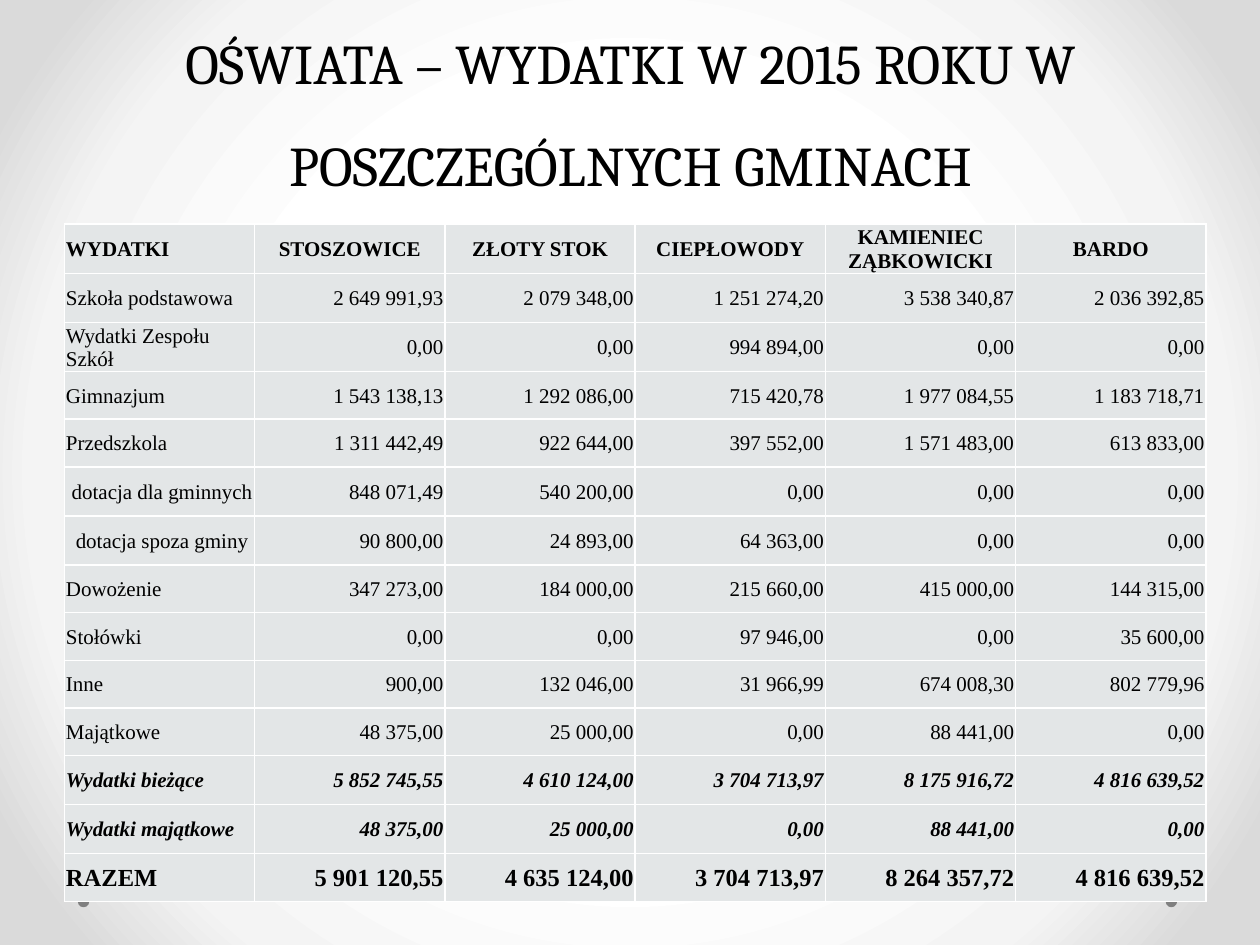
from pptx import Presentation
from pptx import util as u
from pptx.dml.color import RGBColor
from pptx.enum import shapes, text
from pptx.oxml import parse_xml
from pptx.oxml.ns import nsdecls, qn

COLORS = {"text": "000000", "cell": "E3E6E7", "border": "FFFFFF", "dot": "808080"}
BACKGROUND_STOPS = [(50, "FFFFFF"), (76, "F4F4F4"), (92, "DADADA")]
TITLE = "OŚWIATA – WYDATKI W 2015 ROKU W POSZCZEGÓLNYCH GMINACH"

# Row style, then the label and one amount per municipality
ROWS = [
    ("header", "WYDATKI", "STOSZOWICE", "ZŁOTY STOK", "CIEPŁOWODY", "KAMIENIEC ZĄBKOWICKI", "BARDO"),
    ("tall", "Szkoła podstawowa", "2 649 991,93", "2 079 348,00", "1 251 274,20", "3 538 340,87", "2 036 392,85"),
    ("tall", "Wydatki Zespołu Szkół", "0,00", "0,00", "994 894,00", "0,00", "0,00"),
    ("plain", "Gimnazjum", "1 543 138,13", "1 292 086,00", "715 420,78", "1 977 084,55", "1 183 718,71"),
    ("plain", "Przedszkola", "1 311 442,49", "922 644,00", "397 552,00", "1 571 483,00", "613 833,00"),
    ("grant", "dotacja dla gminnych", "848 071,49", "540 200,00", "0,00", "0,00", "0,00"),
    ("grant", "dotacja spoza gminy", "90 800,00", "24 893,00", "64 363,00", "0,00", "0,00"),
    ("plain", "Dowożenie", "347 273,00", "184 000,00", "215 660,00", "415 000,00", "144 315,00"),
    ("plain", "Stołówki", "0,00", "0,00", "97 946,00", "0,00", "35 600,00"),
    ("plain", "Inne", "900,00", "132 046,00", "31 966,99", "674 008,30", "802 779,96"),
    ("plain", "Majątkowe", "48 375,00", "25 000,00", "0,00", "88 441,00", "0,00"),
    ("subtotal", "Wydatki bieżące", "5 852 745,55", "4 610 124,00", "3 704 713,97", "8 175 916,72", "4 816 639,52"),
    ("subtotal", "Wydatki majątkowe", "48 375,00", "25 000,00", "0,00", "88 441,00", "0,00"),
    ("total", "RAZEM", "5 901 120,55", "4 635 124,00", "3 704 713,97", "8 264 357,72", "4 816 639,52"),
]
LEFT, CENTER, RIGHT = text.PP_ALIGN.LEFT, text.PP_ALIGN.CENTER, text.PP_ALIGN.RIGHT
TALL, SHORT = u.Cm(0.99), u.Cm(0.96)
# Height, font size, bold, italic, label alignment, amount alignment
STYLES = {
    "header": (TALL, 12, True, False, LEFT, CENTER),
    "tall": (TALL, 12, False, False, LEFT, RIGHT),
    "plain": (SHORT, 12, False, False, LEFT, RIGHT),
    "grant": (TALL, 12, False, False, CENTER, RIGHT),
    "subtotal": (TALL, 12, True, True, LEFT, RIGHT),
    "total": (SHORT, 14, True, False, LEFT, RIGHT),
}
TABLE_LEFT, TABLE_TOP, TABLE_WIDTH = u.Cm(1.3), u.Cm(4.52), u.Cm(23.01)


def color(name):
    return RGBColor.from_string(COLORS[name])


def set_background(slide):
    """Fill the background with a gradient that spreads from the centre."""
    slide.background.fill.gradient()
    stops = "".join(f'<a:gs pos="{position * 1000}"><a:srgbClr val="{value}"/></a:gs>'
                    for position, value in BACKGROUND_STOPS)
    radial = parse_xml(
        f'<a:gradFill {nsdecls("a")} rotWithShape="1"><a:gsLst>{stops}</a:gsLst><a:path path="circle">'
        '<a:fillToRect l="50000" t="50000" r="50000" b="50000"/></a:path></a:gradFill>')
    linear = slide.element.find(".//" + qn("a:gradFill"))
    linear.getparent().replace(linear, radial)


def add_dots(slide):
    for left in (23.5, 1.57):
        dot = slide.shapes.add_shape(shapes.MSO_SHAPE.OVAL, u.Cm(left), u.Cm(18.06), u.Cm(0.23), u.Cm(0.23))
        dot.shadow.inherit = False
        dot.fill.solid()
        dot.fill.fore_color.rgb = color("dot")
        dot.line.fill.background()


def format_run(run, font, size, bold=False, italic=False):
    run.font.name, run.font.size = font, u.Pt(size)
    run.font.bold, run.font.italic = bold, italic
    run.font.color.rgb = color("text")


def set_title(slide):
    title = slide.shapes.title
    title.left, title.top, title.width, title.height = u.Cm(1.3), u.Cm(0), u.Cm(22.83), u.Cm(4.11)
    frame = title.text_frame
    frame.text = TITLE
    frame.word_wrap = True
    frame.auto_size = text.MSO_AUTO_SIZE.NONE
    frame.vertical_anchor = text.MSO_ANCHOR.BOTTOM
    paragraph = frame.paragraphs[0]
    paragraph.alignment = CENTER
    paragraph.line_spacing = u.Pt(58)
    format_run(paragraph.runs[0], "Cambria", 32)


def set_borders(cell):
    properties = cell._tc.get_or_add_tcPr()
    for index, side in enumerate(("lnL", "lnR", "lnT", "lnB")):
        properties.insert(index, parse_xml(
            f'<a:{side} {nsdecls("a")} w="{u.Pt(1)}"><a:solidFill>'
            f'<a:srgbClr val="{COLORS["border"]}"/></a:solidFill></a:{side}>'))


def fill_cell(cell, content, alignment, size, bold, italic):
    cell.fill.solid()
    cell.fill.fore_color.rgb = color("cell")
    set_borders(cell)
    cell.margin_left = cell.margin_right = cell.margin_top = u.Cm(0.03)
    cell.margin_bottom = 0
    cell.vertical_anchor = text.MSO_ANCHOR.MIDDLE
    paragraph = cell.text_frame.paragraphs[0]
    paragraph.text = content
    paragraph.alignment = alignment
    format_run(paragraph.runs[0], "Times New Roman", size, bold, italic)


def add_expense_table(slide):
    column_count = len(ROWS[0]) - 1
    height = sum(STYLES[row[0]][0] for row in ROWS)
    table = slide.shapes.add_table(len(ROWS), column_count, TABLE_LEFT, TABLE_TOP, TABLE_WIDTH, height).table
    for column in table.columns:
        column.width = TABLE_WIDTH // column_count
    for row_index, (style, *contents) in enumerate(ROWS):
        row_height, size, bold, italic, label_alignment, amount_alignment = STYLES[style]
        table.rows[row_index].height = row_height
        for column_index, content in enumerate(contents):
            alignment = amount_alignment if column_index else label_alignment
            fill_cell(table.cell(row_index, column_index), content, alignment, size, bold, italic)
        if style == "grant":
            table.cell(row_index, 0).margin_left = u.Cm(0.13)


def main():
    presentation = Presentation()
    presentation.slide_width, presentation.slide_height = u.Cm(25.4), u.Cm(19.05)
    slide = presentation.slides.add_slide(presentation.slide_layouts[5])
    set_background(slide)
    add_dots(slide)
    set_title(slide)
    add_expense_table(slide)
    presentation.save("out.pptx")


if __name__ == "__main__":
    main()
